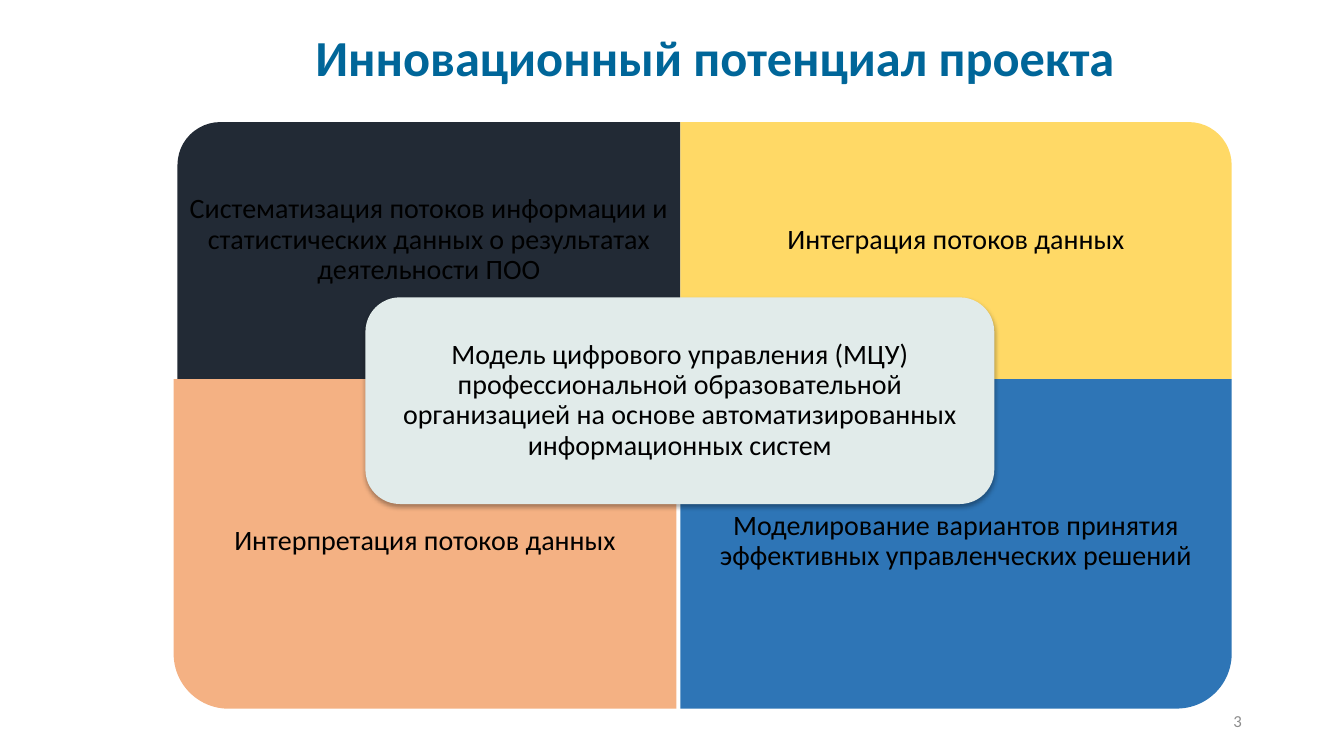
import pptx
import pptx.util
import pptx.dml.color
import pptx.enum.shapes
import pptx.enum.text
import pptx.oxml

Pt = pptx.util.Pt
SHAPES = pptx.enum.shapes.MSO_SHAPE
ANCHORS = pptx.enum.text.MSO_ANCHOR
ALIGN = pptx.enum.text.PP_ALIGN

COLORS = {
    "title": "006699",
    "text": "000000",
    "number": "8C8C8C",
    "navy": "222A35",
    "yellow": "FFD966",
    "orange": "F4B183",
    "blue": "2E75B6",
    "center": "E1EBEA",
}

SHADOW = (
    '<a:outerShdw xmlns:a="http://schemas.openxmlformats.org/drawingml/2006/main" '
    'blurRad="{blur}" dist="{distance}" dir="5400000" algn="ctr" rotWithShape="0">'
    '<a:srgbClr val="000000"><a:alpha val="32000"/></a:srgbClr></a:outerShdw>'
)


class SlideBuilder:
    font_name = "Calibri"

    def __init__(self, slide):
        self.slide = slide
        self.group = slide.shapes.add_group_shape()

    def fill_text(self, shape, text, color="text", size=20, bold=False,
                  align=ALIGN.CENTER, spacing=0.9, insets=(7.2, 3.6, 7.2, 3.6)):
        frame = shape.text_frame
        left, top, right, bottom = insets
        frame_format = {
            "word_wrap": True,
            "auto_size": pptx.enum.text.MSO_AUTO_SIZE.NONE,
            "vertical_anchor": ANCHORS.MIDDLE,
            "margin_left": Pt(left),
            "margin_top": Pt(top),
            "margin_right": Pt(right),
            "margin_bottom": Pt(bottom),
        }
        for name, value in frame_format.items():
            setattr(frame, name, value)
        frame.text = text
        paragraph = frame.paragraphs[0]
        paragraph.alignment = align
        paragraph.line_spacing = spacing
        font = paragraph.runs[0].font
        font_format = {"name": self.font_name, "size": Pt(size), "bold": bold}
        for name, value in font_format.items():
            setattr(font, name, value)
        font.color.rgb = pptx.dml.color.RGBColor.from_string(COLORS[color])

    def title(self, text, left, top, width, height):
        shape = self.slide.shapes.title
        position = {"left": left, "top": top, "width": width, "height": height}
        for name, value in position.items():
            setattr(shape, name, Pt(value))
        self.fill_text(shape, text, "title", 36, True)

    def text_box(self, shapes, text, left, top, width, height, **style):
        shape = shapes.add_textbox(Pt(left), Pt(top), Pt(width), Pt(height))
        self.fill_text(shape, text, **style)

    def panel(self, kind, color, left, top, width, height, rotation=0):
        if rotation in (90, 270):
            left, top = left + (width - height) / 2, top + (height - width) / 2
            width, height = height, width
        shape = self.group.shapes.add_shape(kind, Pt(left), Pt(top), Pt(width), Pt(height))
        shape.rotation = rotation
        shape.shadow.inherit = False
        shape.fill.solid()
        shape.fill.fore_color.rgb = pptx.dml.color.RGBColor.from_string(COLORS[color])
        shape.line.fill.background()
        return shape

    def quadrant(self, text, color, left, top, width, height, rotation, is_upper):
        self.panel(SHAPES.ROUND_1_RECTANGLE, color, left, top, width, height, rotation)
        text_height = height * 0.75
        text_top = top if is_upper else top + height - text_height
        insets = (3, 34, 3, 3) if is_upper else (3, 3, 3, 65.5)
        self.text_box(self.group.shapes, text, left, text_top, width, text_height, insets=insets)

    def center_card(self, text, left, top, width, height, padding):
        shape = self.panel(SHAPES.ROUNDED_RECTANGLE, "center", left, top, width, height)
        effects = shape._element.spPr.find(pptx.oxml.ns.qn("a:effectLst"))
        effects.append(pptx.oxml.parse_xml(SHADOW.format(blur=Pt(3.5), distance=Pt(2.2))))
        self.text_box(self.group.shapes, text, left + padding, top + padding,
                      width - 2 * padding, height - 2 * padding, insets=(6, 6, 6, 6))


def main():
    presentation = pptx.Presentation()
    presentation.slide_width = Pt(960)
    presentation.slide_height = Pt(540)
    builder = SlideBuilder(presentation.slides.add_slide(presentation.slide_layouts[5]))

    builder.title("Инновационный потенциал проекта", 194.4, 7.2, 633, 71.3)

    top, middle, split = 87.2, 270.8, 486
    upper, lower = 183.6, 235.4
    left_width, right_width = 359.2, 393.8
    quadrants = [
        ("Систематизация потоков информации и статистических данных о результатах деятельности ПОО",
         "navy", split - left_width, top, left_width, upper, 270, True),
        ("Интеграция потоков данных",
         "yellow", split, top, right_width, upper, 0, True),
        ("Интерпретация потоков данных",
         "orange", 124, middle, left_width, lower, 180, False),
        ("Моделирование вариантов принятия эффективных управленческих решений",
         "blue", split, middle, right_width, lower, 90, False),
    ]
    for quadrant in quadrants:
        builder.quadrant(*quadrant)

    builder.center_card(
        "Модель цифрового управления (МЦУ) профессиональной образовательной "
        "организацией на основе автоматизированных информационных систем",
        261, 212.4, 449.2, 147.6, 7.2)

    builder.text_box(builder.slide.shapes, "3", 678.2, 500.4, 216, 28.8,
                     color="number", size=12, align=ALIGN.RIGHT, spacing=1.0)

    presentation.save("out.pptx")


if __name__ == "__main__":
    main()
